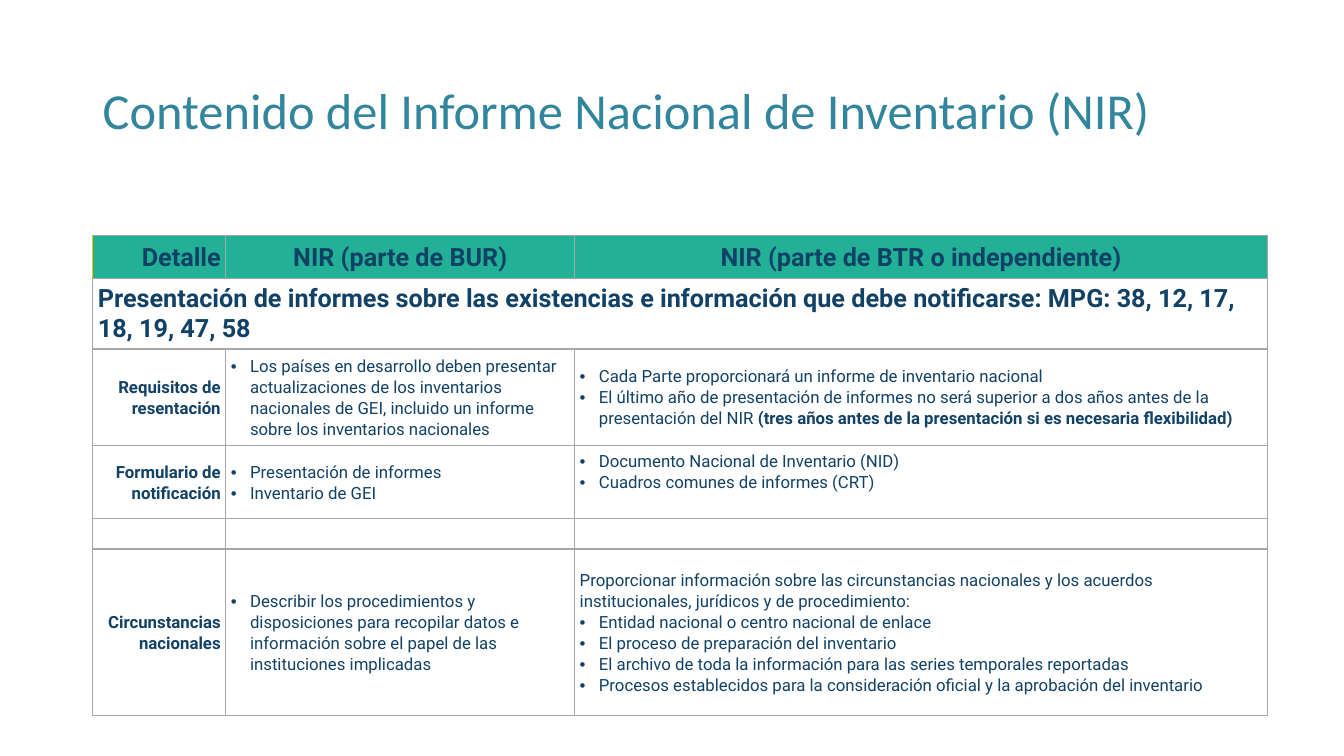
from dataclasses import dataclass

from lxml.etree import SubElement
from pptx import Presentation
from pptx.dml.color import RGBColor
from pptx.enum.text import MSO_ANCHOR, PP_ALIGN
from pptx.oxml import parse_xml
from pptx.oxml.ns import nsdecls, qn
from pptx.slide import Slide
from pptx.table import Table, _Cell
from pptx.text.text import TextFrame
from pptx.util import Inches, Pt


@dataclass(frozen=True)
class Theme:
    title: str = "31859C"
    ink: str = "124166"
    header: str = "22B097"
    paper: str = "FFFFFF"
    border: str = "A6A6A6"
    accent: str = "FFC000"
    title_font: str = "Calibri"
    body_font: str = "Roboto"
    title_size: int = 36
    heading_size: int = 18
    body_size: int = 12
    empty_size: int = 10


@dataclass(frozen=True)
class Item:
    text: str
    strong: str = ""
    bullet: bool = True


@dataclass(frozen=True)
class Row:
    height: float
    label: str = ""
    bur: tuple[Item, ...] = ()
    btr: tuple[Item, ...] = ()
    btr_anchor: MSO_ANCHOR = MSO_ANCHOR.MIDDLE


THEME = Theme()
COLUMN_WIDTHS = (1.32, 3.46, 6.87)
HEADER_HEIGHT = 0.42
SECTION_HEIGHT = 0.68
HEADINGS = (
    ("Detalle", PP_ALIGN.RIGHT),
    ("NIR (parte de BUR)", PP_ALIGN.CENTER),
    ("NIR (parte de BTR o independiente)", PP_ALIGN.CENTER),
)
SECTION = (
    "Presentación de informes sobre las existencias e información que debe "
    "notificarse: MPG: 38, 12, 17, 18, 19, 47, 58"
)
ROWS = (
    Row(
        0.93,
        "Requisitos de resentación",
        (Item("Los países en desarrollo deben presentar actualizaciones de los inventarios "
              "nacionales de GEI, incluido un informe sobre los inventarios nacionales"),),
        (
            Item("Cada Parte proporcionará un informe de inventario nacional"),
            Item("El último año de presentación de informes no será superior a dos años "
                 "antes de la presentación del NIR ",
                 "(tres años antes de la presentación si es necesaria flexibilidad)"),
        ),
    ),
    Row(
        0.73,
        "Formulario de notificación",
        (Item("Presentación de informes"), Item("Inventario de GEI")),
        (Item("Documento Nacional de Inventario (NID)"), Item("Cuadros comunes de informes (CRT)")),
        MSO_ANCHOR.TOP,
    ),
    Row(0.3),
    Row(
        1.65,
        "Circunstancias nacionales",
        (Item("Describir los procedimientos y disposiciones para recopilar datos e "
              "información sobre el papel de las instituciones implicadas"),),
        (
            Item("Proporcionar información sobre las circunstancias nacionales y los acuerdos "
                 "institucionales, jurídicos y de procedimiento:", bullet=False),
            Item("Entidad nacional o centro nacional de enlace"),
            Item("El proceso de preparación del inventario"),
            Item("El archivo de toda la información para las series temporales reportadas"),
            Item("Procesos establecidos para la consideración oficial y la aprobación del inventario"),
        ),
    ),
)


def write(frame: TextFrame, text: str, *, strong: str = "", first: bool = True,
          size: int = THEME.body_size, font: str = THEME.body_font,
          color: str = THEME.ink, bold: bool = False, bullet: bool = False,
          align: PP_ALIGN = PP_ALIGN.LEFT, spacing: float = 1.07) -> None:
    para = frame.paragraphs[0] if first else frame.add_paragraph()
    para.alignment = align
    para.line_spacing = spacing
    if bullet:
        properties = para._p.get_or_add_pPr()
        properties.set("marL", str(Inches(0.19)))
        properties.set("indent", str(-Inches(0.19)))
        SubElement(properties, qn("a:buFont")).set("typeface", "Arial")
        SubElement(properties, qn("a:buChar")).set("char", "•")
    for content, heavy in ((text, bold), (strong, True)):
        if content:
            span = para.add_run()
            span.text = content
            span.font.name = font
            span.font.size = Pt(size)
            span.font.bold = heavy
            span.font.color.rgb = RGBColor.from_string(color)


def style_cell(cell: _Cell, fill: str = THEME.paper, left: str = THEME.border) -> None:
    cell.fill.solid()
    cell.fill.fore_color.rgb = RGBColor.from_string(fill)
    cell.vertical_anchor = MSO_ANCHOR.MIDDLE
    cell.margin_left = cell.margin_right = Inches(0.05)
    cell.margin_top = cell.margin_bottom = Inches(0.05)
    properties = cell._tc.get_or_add_tcPr()
    for position, side in enumerate("LRTB"):
        color = left if side == "L" else THEME.border
        properties.insert(position, parse_xml(
            f'<a:ln{side} {nsdecls("a")} w="{Pt(1)}"><a:solidFill>'
            f'<a:srgbClr val="{color}"/></a:solidFill></a:ln{side}>'
        ))


def write_items(cell: _Cell, items: tuple[Item, ...]) -> None:
    for index, item in enumerate(items):
        write(cell.text_frame, item.text, strong=item.strong,
              first=index == 0, bullet=item.bullet)


def fill_headings(table: Table) -> None:
    for column, (heading, align) in enumerate(HEADINGS):
        cell = table.cell(0, column)
        style_cell(cell, THEME.header, THEME.border if column else THEME.accent)
        write(cell.text_frame, heading, size=THEME.heading_size, bold=True, align=align)
        style_cell(table.cell(1, column))
    section = table.cell(1, 0)
    section.merge(table.cell(1, len(HEADINGS) - 1))
    write(section.text_frame, SECTION, size=THEME.heading_size, bold=True, spacing=1.0)


def fill_row(table: Table, index: int, row: Row) -> None:
    label, bur, btr = (table.cell(index, column) for column in range(len(COLUMN_WIDTHS)))
    for cell in (label, bur, btr):
        style_cell(cell)
        if not row.label:
            ending = SubElement(cell.text_frame.paragraphs[0]._p, qn("a:endParaRPr"))
            ending.set("sz", str(THEME.empty_size * 100))
    if row.label:
        write(label.text_frame, row.label, bold=True, align=PP_ALIGN.RIGHT)
        write_items(bur, row.bur)
        write_items(btr, row.btr)
        btr.vertical_anchor = row.btr_anchor


def add_title(page: Slide) -> None:
    box = page.shapes.add_textbox(Inches(0.92), Inches(0.4), Inches(11.5), Inches(1.45))
    box.text_frame.word_wrap = True
    box.text_frame.vertical_anchor = MSO_ANCHOR.MIDDLE
    write(box.text_frame, "Contenido del Informe Nacional de Inventario (NIR)",
          size=THEME.title_size, font=THEME.title_font, color=THEME.title, spacing=0.9)


def add_report_table(page: Slide) -> None:
    heights = (HEADER_HEIGHT, SECTION_HEIGHT, *(row.height for row in ROWS))
    table = page.shapes.add_table(
        len(heights), len(COLUMN_WIDTHS), Inches(0.92), Inches(2.34),
        Inches(sum(COLUMN_WIDTHS)), Inches(sum(heights)),
    ).table
    table.horz_banding = False
    for column, width in zip(table.columns, COLUMN_WIDTHS):
        column.width = Inches(width)
    for line, height in zip(table.rows, heights):
        line.height = Inches(height)
    fill_headings(table)
    for index, row in enumerate(ROWS, start=2):
        fill_row(table, index, row)


def main() -> None:
    deck = Presentation()
    deck.slide_width, deck.slide_height = Inches(13.33), Inches(7.5)
    page = deck.slides.add_slide(deck.slide_layouts[6])
    add_title(page)
    add_report_table(page)
    deck.save("out.pptx")


if __name__ == "__main__":
    main()
